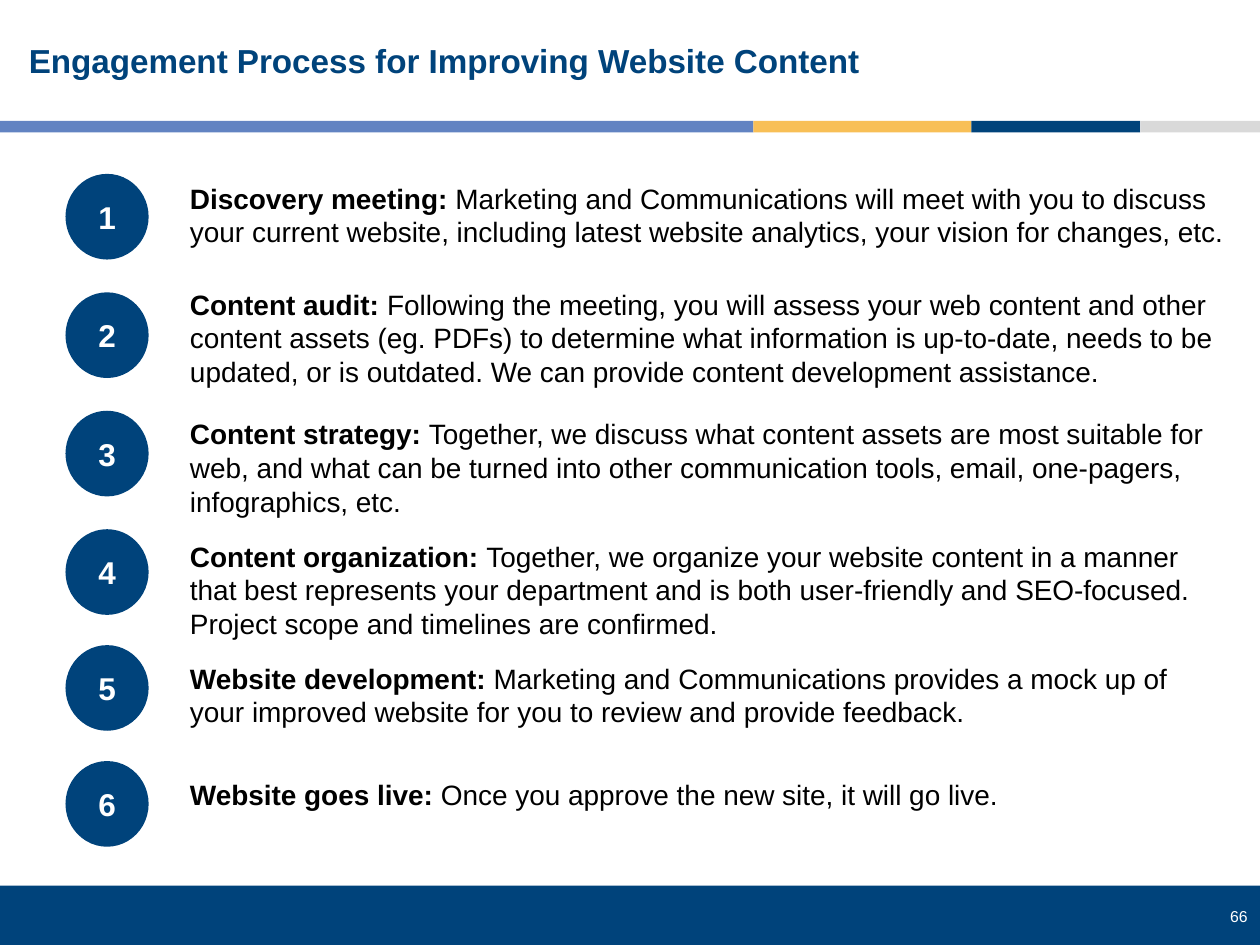
from pptx import Presentation
from pptx.dml.color import RGBColor
from pptx.enum.shapes import MSO_SHAPE as Shape
from pptx.enum.text import MSO_ANCHOR as Anchor, PP_ALIGN as Align
from pptx.util import Inches, Pt

NAVY, BLUE, GOLD, GREY = "00437B", "6283C2", "F8BF56", "D9D9D9"
WHITE, BLACK = "FFFFFF", "000000"

# Left edge, width and colour of each piece of the line under the title
STRIPES = [
    (0, 5.98, BLUE),
    (5.98, 1.73, GOLD),
    (7.71, 1.34, NAVY),
    (9.05, 0.95, GREY),
]

# Circle top, text top, text width, text height, heading, description
STEPS = [
    (1.38, 1.39, 8.5, 0.64, "Discovery meeting: ",
     "Marketing and Communications will meet with you to discuss your current "
     "website, including latest website analytics, your vision for changes, etc."),
    (2.32, 2.23, 8.34, 0.91, "Content audit: ",
     "Following the meeting, you will assess your web content and other content "
     "assets (eg. PDFs) to determine what information is up-to-date, needs to be "
     "updated, or is outdated. We can provide content development assistance."),
    (3.26, 3.26, 8.34, 0.91, "Content strategy: ",
     "Together, we discuss what content assets are most suitable for web, and what "
     "can be turned into other communication tools, email, one-pagers, "
     "infographics, etc."),
    (4.2, 4.23, 8.34, 0.91, "Content organization: ",
     "Together, we organize your website content in a manner that best represents "
     "your department and is both user-friendly and SEO-focused. Project scope and "
     "timelines are confirmed."),
    (5.12, 5.2, 8.34, 0.64, "Website development: ",
     "Marketing and Communications provides a mock up of your improved website for "
     "you to review and provide feedback."),
    (6.04, 6.12, 8.34, 0.37, "Website goes live: ",
     "Once you approve the new site, it will go live."),
]


def color(value):
    return RGBColor.from_string(value)


def add_text(shape, text, lead="", size=16, fill=BLACK, bold=False,
             align=Align.LEFT, anchor=Anchor.TOP, line_spacing=None):
    """Write one paragraph, with an optional bold lead-in before the text."""
    frame = shape.text_frame
    frame.word_wrap = True
    frame.vertical_anchor = anchor
    paragraph = frame.paragraphs[0]
    paragraph.alignment = align
    paragraph.line_spacing = line_spacing
    for words, is_bold in ((lead, True), (text, bold)):
        if words:
            run = paragraph.add_run()
            run.text = words
            run.font.name = "Arial"
            run.font.size = Pt(size)
            run.font.bold = is_bold
            run.font.color.rgb = color(fill)


def add_box(slide, left, top, width, height, text, **text_format):
    box = slide.shapes.add_textbox(
        Inches(left), Inches(top), Inches(width), Inches(height))
    add_text(box, text, **text_format)


def add_filled(slide, kind, left, top, width, height, fill):
    shape = slide.shapes.add_shape(
        kind, Inches(left), Inches(top), Inches(width), Inches(height))
    shape.shadow.inherit = False
    shape.fill.solid()
    shape.fill.fore_color.rgb = color(fill)
    shape.line.fill.background()
    return shape


def add_frame(slide):
    """Draw the footer band, the striped line and the page number."""
    add_filled(slide, Shape.RECTANGLE, 0, 7.03, 10, 0.47, NAVY)
    for left, width, fill in STRIPES:
        add_filled(slide, Shape.RECTANGLE, left, 0.96, width, 0.09, fill)
    add_box(slide, 9.31, 7.15, 0.69, 0.25, "66",
            size=9, fill=WHITE, align=Align.RIGHT)


def add_step(slide, number, circle_top, text_top, width, height, heading, description):
    circle = add_filled(slide, Shape.OVAL, 0.52, circle_top, 0.66, 0.68, NAVY)
    add_text(circle, str(number), size=18, fill=WHITE, bold=True,
             align=Align.CENTER, anchor=Anchor.MIDDLE)
    add_box(slide, 1.41, text_top, width, height, description, lead=heading)


def main():
    presentation = Presentation()
    presentation.slide_width = Inches(10)
    presentation.slide_height = Inches(7.5)
    slide = presentation.slides.add_slide(presentation.slide_layouts[6])
    add_frame(slide)
    add_box(slide, 0.13, 0.17, 9.61, 0.65,
            "Engagement Process for Improving Website Content",
            size=19, fill=NAVY, bold=True, anchor=Anchor.MIDDLE, line_spacing=0.9)
    for number, step in enumerate(STEPS, start=1):
        add_step(slide, number, *step)
    presentation.save("out.pptx")


if __name__ == "__main__":
    main()
